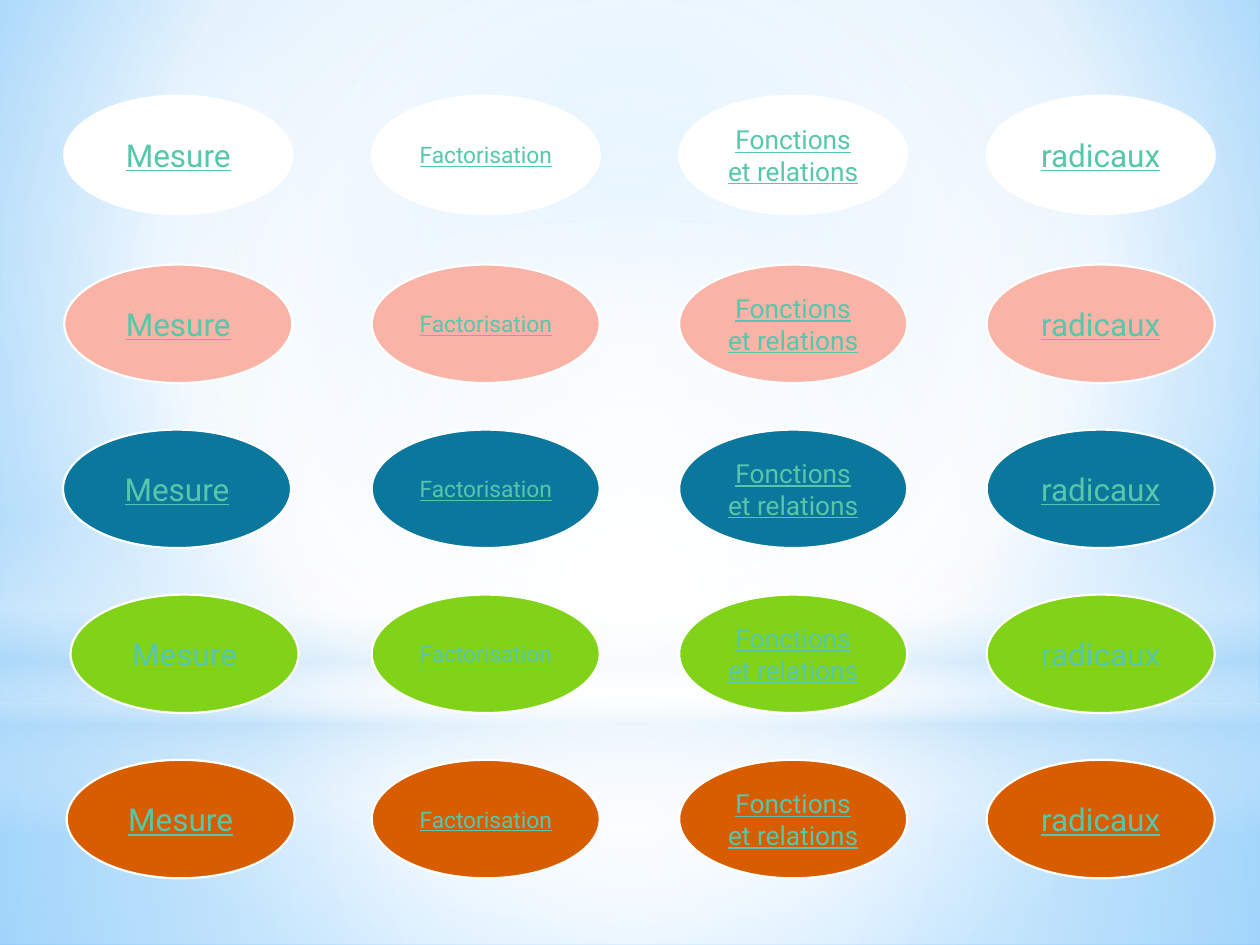
import pptx
import pptx.dml.color
import pptx.enum.shapes
import pptx.enum.text
import pptx.oxml
import pptx.oxml.ns
import pptx.util

Pt = pptx.util.Pt
SHAPE = pptx.enum.shapes.MSO_SHAPE

COLORS = {
    "white": "FFFFFF", "pale": "B4DCFA", "sky": "9ED5FF", "blue": "5BB9FF",
    "pink": "F9B3A7", "teal": "0C779D", "green": "81D31A", "orange": "D85C00",
    "link": "56C7AA",
}
CENTER = (50, 50, 50, 50)

# Topics across: text, font size
TOPICS = [("Mesure", 18), ("Factorisation", 13),
          ("Fonctions et relations", 15), ("radicaux", 18)]
# Levels down: fill, top, shift of the first oval
LEVELS = [("white", 54.7, 0), ("pink", 151.2, 0), ("teal", 245.5, -0.7),
          ("green", 339.8, 3.6), ("orange", 434.2, 1.4)]
LEFT, STEP, OVAL_W, OVAL_H = 36.7, 175.7, 130.3, 67.7


def rgb(name):
    return pptx.dml.color.RGBColor.from_string(COLORS[name])


def set_gradient(fill, element, stops, focus=None):
    """Stops are (position, colour, opacity); without focus it runs downwards."""
    fill.background()
    gs = "".join(
        f'<a:gs pos="{pos * 1000}"><a:srgbClr val="{COLORS[name]}">'
        f'<a:alpha val="{opacity * 1000}"/></a:srgbClr></a:gs>'
        for pos, name, opacity in stops)
    if focus:
        sides = " ".join(f'{k}="{v * 1000}"' for k, v in zip("ltrb", focus))
        direction = f'<a:path path="circle"><a:fillToRect {sides}/></a:path>'
    else:
        direction = '<a:lin ang="5400000" scaled="0"/>'
    grad = pptx.oxml.parse_xml(
        f'<a:gradFill {pptx.oxml.ns.nsdecls("a")} rotWithShape="1">'
        f'<a:gsLst>{gs}</a:gsLst>{direction}</a:gradFill>')
    empty = element.find(".//" + pptx.oxml.ns.qn("a:noFill"))
    empty.getparent().replace(empty, grad)


def add_glow(slide, kind, top, height, stops, focus=None):
    s = slide.shapes.add_shape(kind, 0, Pt(top), Pt(720), Pt(height))
    s.shadow.inherit = False
    set_gradient(s.fill, s.element, stops, focus)
    s.line.fill.background()


def add_backdrop(slide):
    set_gradient(slide.background.fill, slide.element,
                 [(0, "sky", 100), (60, "white", 100), (100, "blue", 100)],
                 (20, 10, 20, 60))
    # Floor and wall
    add_glow(slide, SHAPE.RECTANGLE, 401.8, 138.2,
             [(0, "white", 91), (37, "white", 76), (100, "pale", 79)], CENTER)
    add_glow(slide, SHAPE.RECTANGLE, 0, 401.8,
             [(0, "white", 89), (48, "white", 62), (100, "pale", 79)], CENTER)
    # Horizon band and central light
    add_glow(slide, SHAPE.RECTANGLE, 296.6, 180,
             [(0, "white", 0), (29, "white", 30), (45, "pale", 40),
              (55, "white", 26), (65, "pale", 60), (100, "white", 0)])
    add_glow(slide, SHAPE.OVAL, 126, 401.8,
             [(0, "white", 100), (56, "white", 0)], CENTER)


def add_oval(slide, left, top, color, text, size):
    s = slide.shapes.add_shape(SHAPE.OVAL, Pt(left), Pt(top), Pt(OVAL_W), Pt(OVAL_H))
    s.shadow.inherit = False
    s.fill.solid()
    s.fill.fore_color.rgb = rgb(color)
    s.line.color.rgb = rgb("white")
    s.line.width = Pt(1.25)
    tf = s.text_frame
    tf.word_wrap = True
    tf.vertical_anchor = pptx.enum.text.MSO_ANCHOR.MIDDLE
    p = tf.paragraphs[0]
    p.alignment = pptx.enum.text.PP_ALIGN.CENTER
    r = p.add_run()
    r.text = text
    r.font.name = "Roboto"
    r.font.size = Pt(size)
    r.font.underline = True
    r.font.color.rgb = rgb("link")


def main():
    prs = pptx.Presentation()
    prs.slide_width, prs.slide_height = Pt(720), Pt(540)
    slide = prs.slides.add_slide(prs.slide_layouts[6])
    add_backdrop(slide)
    # Grid of topics by level
    for color, top, shift in LEVELS:
        for col, (text, size) in enumerate(TOPICS):
            left = LEFT + col * STEP + (shift if col == 0 else 0)
            add_oval(slide, left, top, color, text, size)
    prs.save("out.pptx")


if __name__ == "__main__":
    main()
